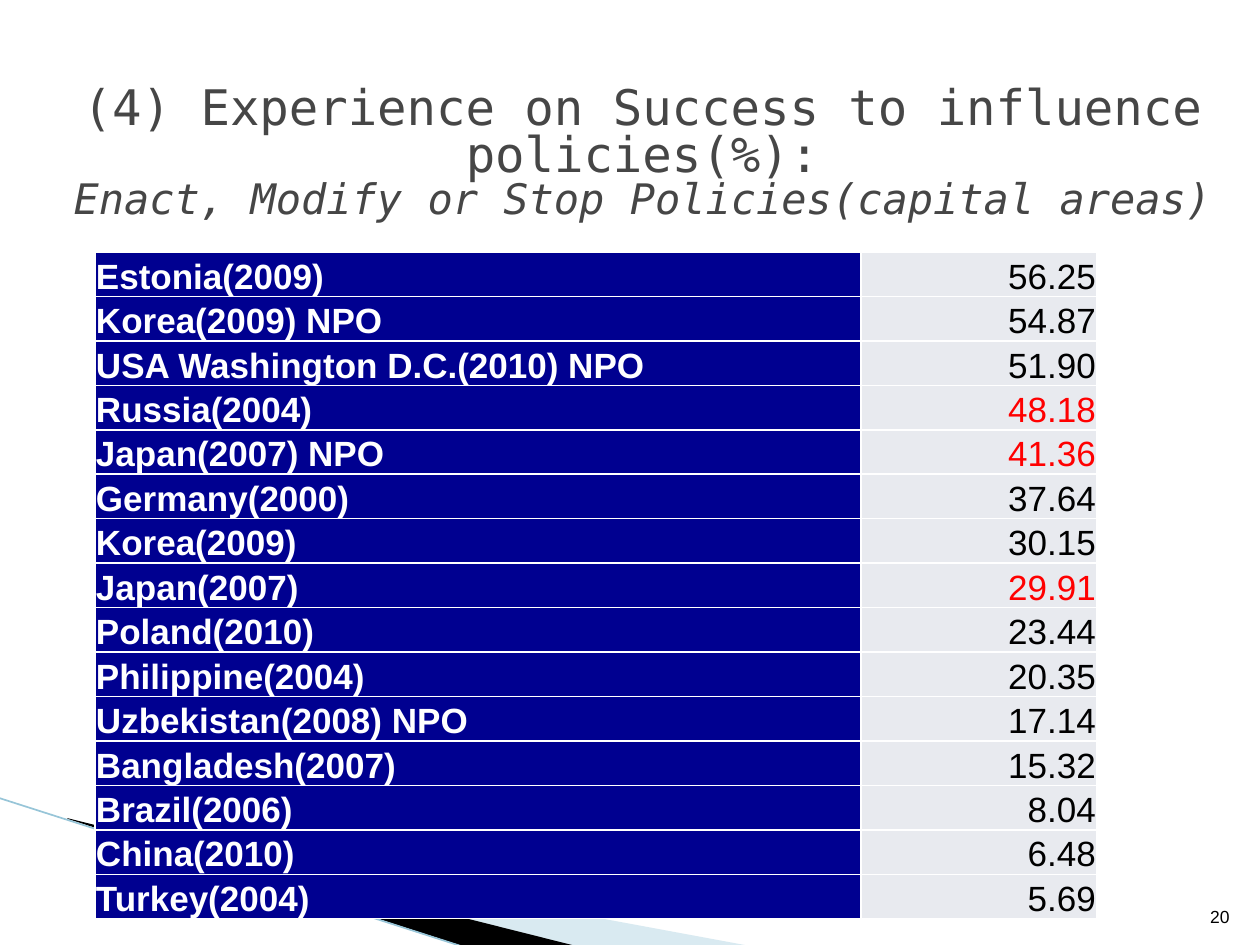
from dataclasses import dataclass

from lxml import etree
from pptx import Presentation
from pptx import util as u
from pptx.dml.color import RGBColor
from pptx.enum import shapes, text
from pptx.oxml import ns


@dataclass(frozen=True)
class Theme:
    white: str = "FFFFFF"
    black: str = "000000"
    red: str = "FF0000"
    gray: str = "464646"
    navy: str = "000090"
    pale: str = "E8EAEF"
    sky: str = "A0CBDC"
    edge: str = "97C5D8"
    sans: str = "Arial"
    mono: str = "DejaVu Sans Mono"
    head: int = 28
    sub: int = 24
    body: int = 20
    note: int = 10


@dataclass(frozen=True)
class Row:
    label: str
    share: str
    marked: bool = False


@dataclass(frozen=True)
class Wedge:
    points: tuple
    color: str
    alpha: int = 100


T = Theme()
ROWS = (
    Row("Estonia(2009)", "56.25"),
    Row("Korea(2009) NPO", "54.87"),
    Row("USA Washington D.C.(2010) NPO", "51.90"),
    Row("Russia(2004)", "48.18", True),
    Row("Japan(2007) NPO", "41.36", True),
    Row("Germany(2000)", "37.64"),
    Row("Korea(2009)", "30.15"),
    Row("Japan(2007)", "29.91", True),
    Row("Poland(2010)", "23.44"),
    Row("Philippine(2004)", "20.35"),
    Row("Uzbekistan(2008) NPO", "17.14"),
    Row("Bangladesh(2007)", "15.32"),
    Row("Brazil(2006)", "8.04"),
    Row("China(2010)", "6.48"),
    Row("Turkey(2004)", "5.69"),
)
WEDGES = (
    Wedge(((69, 820), (750, 946), (575, 946), (69, 819)), T.sky, 40),
    Wedge(((67, 818), (576, 946), (469, 948), (68, 819)), T.black),
)


def px(n: int) -> int:
    """Turn px, 126 to the inch, into EMU."""
    return u.Emu(n * 914400 // 126)


def style(font, name: str, size: int, color: str, bold: bool = False) -> None:
    font.name, font.size, font.bold = name, u.Pt(size), bold
    font.color.rgb = RGBColor.from_string(color)


def paint(fill, color: str) -> None:
    fill.solid()
    fill.fore_color.rgb = RGBColor.from_string(color)


def add_wedge(slide, wedge: Wedge) -> None:
    first, *rest = [tuple(map(px, p)) for p in wedge.points]
    pen = slide.shapes.build_freeform(*first)
    pen.add_line_segments(rest, close=True)
    shape = pen.convert_to_shape()
    shape.shadow.inherit = False
    shape.line.fill.background()
    paint(shape.fill, wedge.color)
    if wedge.alpha < 100:
        tone = shape.fill._xPr.find(".//" + ns.qn("a:srgbClr"))
        etree.SubElement(tone, ns.qn("a:alpha"), val=str(wedge.alpha * 1000))


def add_edge(slide) -> None:
    line = slide.shapes.add_connector(
        shapes.MSO_CONNECTOR.STRAIGHT, px(-1), px(798), px(467), px(948))
    line.line.width = u.Pt(0.95)
    line.line.color.rgb = RGBColor.from_string(T.edge)
    etree.SubElement(line._element.spPr, ns.qn("a:effectLst"))


def set_title(slide) -> None:
    box = slide.shapes.title
    box.left, box.top, box.width, box.height = map(px, (25, 106, 1235, 123))
    frame = box.text_frame
    frame.text = ("(4) Experience on Success to influence policies(%):\v"
                  "Enact, Modify or Stop Policies(capital areas)")
    frame.word_wrap = True
    frame.auto_size = text.MSO_AUTO_SIZE.NONE
    frame.vertical_anchor = text.MSO_ANCHOR.BOTTOM
    para = frame.paragraphs[0]
    para.alignment = text.PP_ALIGN.CENTER
    para.line_spacing = 0.8
    head, sub = para.runs
    style(head.font, T.mono, T.head, T.gray)
    style(sub.font, T.mono, T.sub, T.gray)
    sub.font.italic = True


def add_number(slide) -> None:
    box = slide.shapes.add_textbox(*map(px, (1192, 883, 50, 50)))
    frame = box.text_frame
    frame.text = "20"
    frame.word_wrap = True
    frame.vertical_anchor = text.MSO_ANCHOR.BOTTOM
    para = frame.paragraphs[0]
    para.alignment = text.PP_ALIGN.RIGHT
    style(para.runs[0].font, T.sans, T.note, T.black)


def add_borders(cell) -> None:
    """Put a thin white line on each side, ahead of the cell fill."""
    props = cell._tc.get_or_add_tcPr()
    for i, side in enumerate(("lnL", "lnR", "lnT", "lnB")):
        line = etree.Element(ns.qn("a:" + side), w=str(u.Pt(1)))
        fill = etree.SubElement(line, ns.qn("a:solidFill"))
        etree.SubElement(fill, ns.qn("a:srgbClr"), val=T.white)
        props.insert(i, line)


def fill_cell(cell, words: str, back: str, color: str, align, bold: bool) -> None:
    cell.text_frame.text = words
    cell.margin_left = cell.margin_right = cell.margin_top = px(1)
    cell.margin_bottom = 0
    cell.vertical_anchor = text.MSO_ANCHOR.BOTTOM
    para = cell.text_frame.paragraphs[0]
    para.alignment = align
    style(para.runs[0].font, T.sans, T.body, color, bold)
    paint(cell.fill, back)
    add_borders(cell)


def add_shares(slide) -> None:
    table = slide.shapes.add_table(
        len(ROWS), 2, *map(px, (95, 252, 1002, 667))).table
    table.first_row = table.horz_banding = False
    for col, width in zip(table.columns, (766, 236)):
        col.width = px(width)
    for i, row in enumerate(ROWS):
        fill_cell(table.cell(i, 0), row.label, T.navy, T.white,
                  text.PP_ALIGN.LEFT, True)
        fill_cell(table.cell(i, 1), row.share, T.pale,
                  T.red if row.marked else T.black, text.PP_ALIGN.RIGHT, False)


def main() -> None:
    deck = Presentation()
    deck.slide_width, deck.slide_height = px(1260), px(945)
    slide = deck.slides.add_slide(deck.slide_layouts[5])
    for wedge in WEDGES:
        add_wedge(slide, wedge)
    add_edge(slide)
    add_number(slide)
    set_title(slide)
    add_shares(slide)
    deck.save("out.pptx")


if __name__ == "__main__":
    main()
